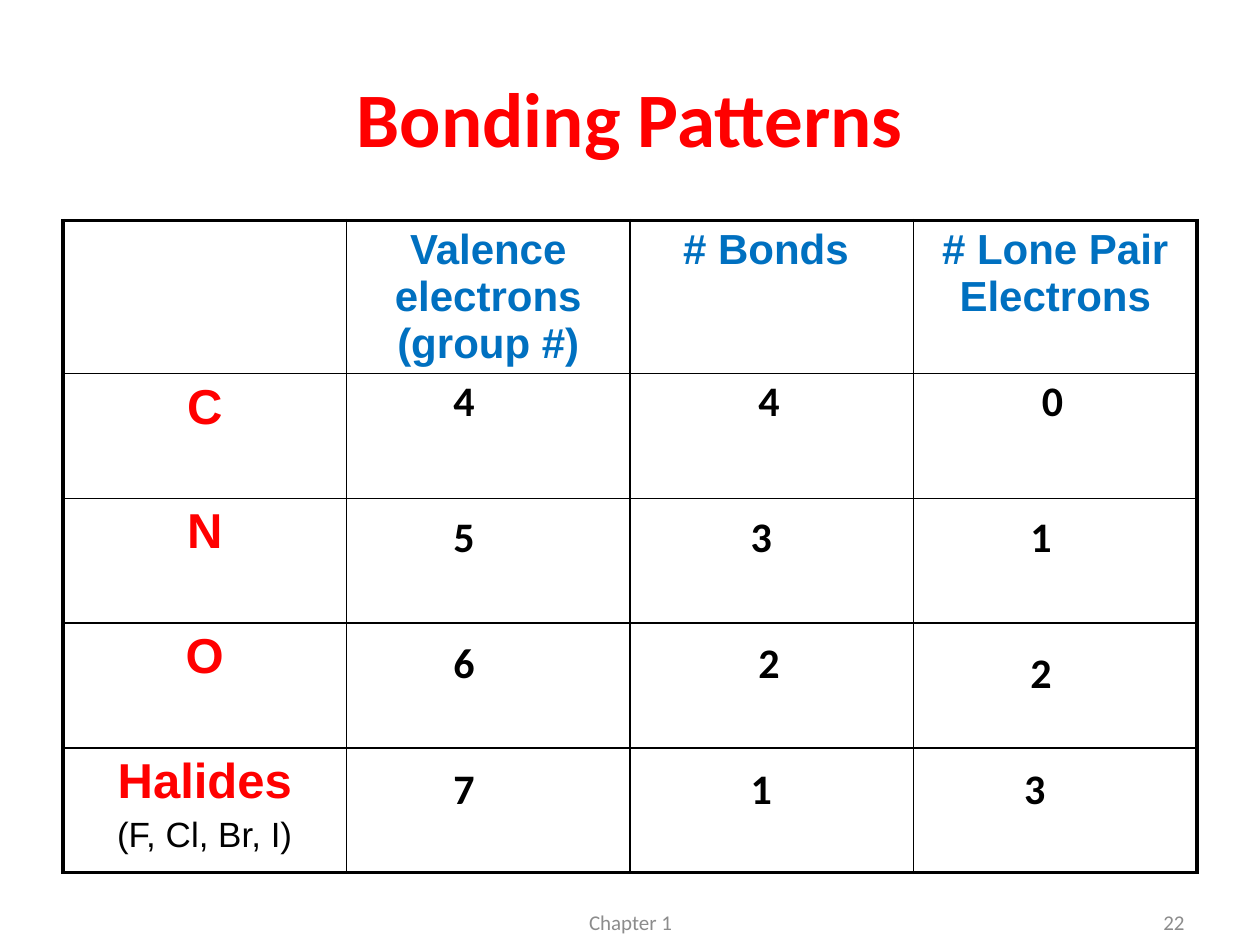
import pptx
import pptx.util
import pptx.dml.color
import pptx.enum.text
import lxml.etree

SCALE = 9144
RED, BLUE, BLACK, GRAY = "FF0000", "0070C0", "000000", "8C8C8C"
ALIGN = pptx.enum.text.PP_ALIGN
ANCHOR = pptx.enum.text.MSO_ANCHOR
HEADS = ["", "Valence electrons (group #)", "# Bonds ", "# Lone Pair Electrons"]
ATOMS = ["C", "N", "O", "Halides"]
COUNTS = [
    [("4", 300, 117), ("4", 542, 117), ("0", 767, 117)],
    [("5", 300, 225), ("3", 536, 225), ("1", 758, 225)],
    [("6", 300, 325), ("2", 542, 325), ("2", 758, 333)],
    [("7", 300, 425), ("1", 536, 425), ("3", 753, 425)],
]


def px(num):
    return pptx.util.Emu(num * SCALE)


def color(hue):
    return pptx.dml.color.RGBColor.from_string(hue)


def style(para, size, hue, bold=False, face="Calibri", align=ALIGN.CENTER):
    para.alignment = align
    font = para.font
    font.size = pptx.util.Pt(size)
    font.name = face
    font.bold = bold
    font.color.rgb = color(hue)


def place(shape, left, top, width, height):
    shape.left, shape.top = px(left), px(top)
    shape.width, shape.height = px(width), px(height)


def border(cell, sides):
    props = cell._tc.get_or_add_tcPr()
    space = "http://schemas.openxmlformats.org/drawingml/2006/main"
    for spot, (side, width) in enumerate(sides.items()):
        line = lxml.etree.Element(f"{{{space}}}ln{side}", w=str(pptx.util.Pt(width)))
        fill = lxml.etree.SubElement(line, f"{{{space}}}solidFill")
        lxml.etree.SubElement(fill, f"{{{space}}}srgbClr", val=BLACK)
        props.insert(spot, line)


def add_title(slide, left, top, width, height):
    title = slide.shapes.title
    place(title, left, top, width, height)
    frame = title.text_frame
    frame.text = "Bonding Patterns"
    frame.vertical_anchor = ANCHOR.MIDDLE
    style(frame.paragraphs[0], 44, RED, True)


def add_grid(slide, left, top, width, height):
    rows, cols = len(ATOMS) + 1, len(HEADS)
    shape = slide.shapes.add_table(rows, cols, px(left), px(top), px(width), px(height))
    table = shape.table
    table.first_row = table.horz_banding = False
    for row in range(rows):
        table.rows[row].height = px(99 if row else 108)
        for col in range(cols):
            cell = table.cell(row, col)
            cell.fill.background()
            border(cell, {
                "L": 1 if col else 2.25,
                "R": 2.25 if col == cols - 1 else 1,
                "T": 1 if row else 2.25,
                "B": 2.25 if row == rows - 1 else 1,
            })
    for col, head in enumerate(HEADS):
        if head:
            cell = table.cell(0, col)
            cell.text = head
            style(cell.text_frame.paragraphs[0], 24, BLUE, True, "Arial")
    for row, atom in enumerate(ATOMS, 1):
        cell = table.cell(row, 0)
        cell.text = atom
        style(cell.text_frame.paragraphs[0], 28, RED, True, "Arial")
    note = table.cell(rows - 1, 0).text_frame.add_paragraph()
    note.text = "(F, Cl, Br, I)"
    note.space_before = pptx.util.Pt(4)
    style(note, 20, BLACK, False, "Arial")


def add_label(slide, text, left, top, width, height):
    box = slide.shapes.add_textbox(px(left), px(top), px(width), px(height))
    frame = box.text_frame
    frame.text = text
    return frame


def add_counts(slide, left, top):
    for row in COUNTS:
        for text, across, down in row:
            frame = add_label(slide, text, left + across, top + down, 39, 50)
            frame.word_wrap = False
            frame.auto_size = pptx.enum.text.MSO_AUTO_SIZE.SHAPE_TO_FIT_TEXT
            style(frame.paragraphs[0], 24, BLACK, True, align=ALIGN.LEFT)


def add_footer(slide, left, top, width, height):
    parts = [
        ("Chapter 1", left + 292, 317, ALIGN.CENTER),
        ("22", left + width - 233, 233, ALIGN.RIGHT),
    ]
    for text, start, span, align in parts:
        frame = add_label(slide, text, start, top, span, height)
        frame.word_wrap = True
        frame.vertical_anchor = ANCHOR.MIDDLE
        style(frame.paragraphs[0], 12, GRAY, align=align)


def main():
    deck = pptx.Presentation()
    deck.slide_width, deck.slide_height = px(1000), px(750)
    slide = deck.slides.add_slide(deck.slide_layouts[5])
    add_title(slide, 50, 30, 900, 125)
    add_grid(slide, 50, 175, 900, 504)
    add_counts(slide, 50, 175)
    add_footer(slide, 50, 706, 900, 52)
    deck.save("out.pptx")


if __name__ == "__main__":
    main()
